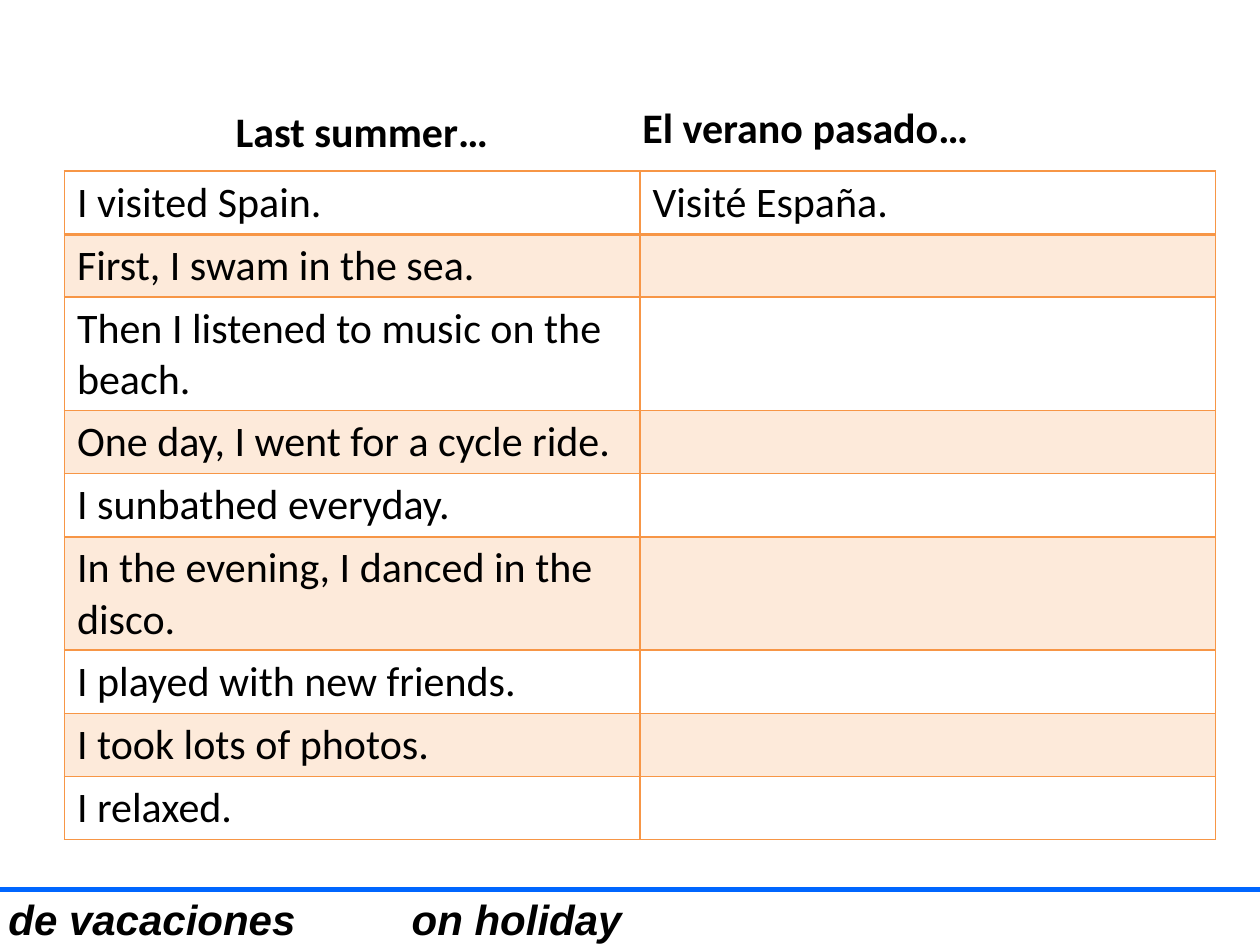
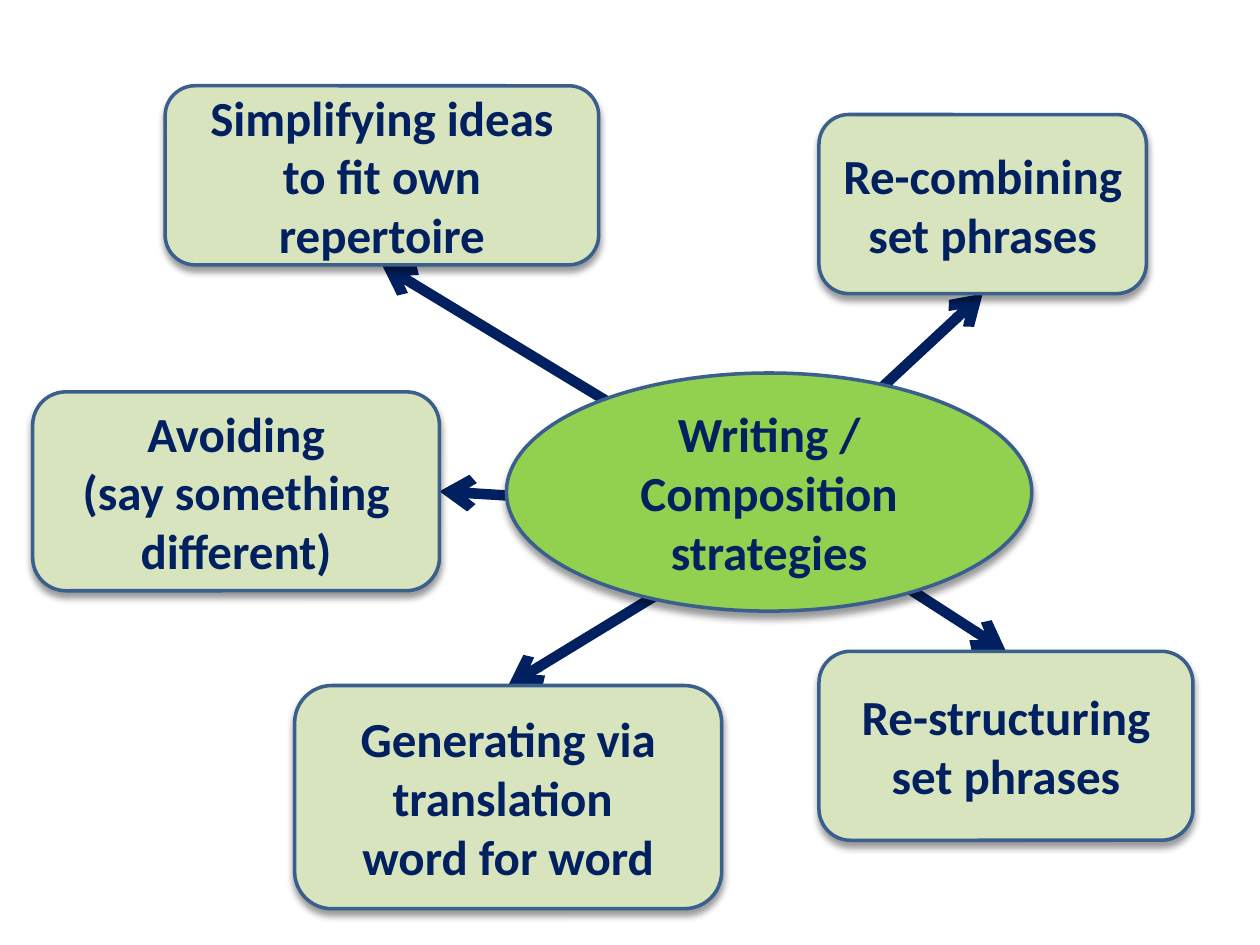
"""Builds two language-lesson slides: a translation table and a map of writing strategies."""
from dataclasses import dataclass

from lxml import etree
from pptx import Presentation
from pptx import util as u
from pptx.dml.color import RGBColor
from pptx.enum import shapes, text
from pptx.oxml import ns


@dataclass(frozen=True)
class Theme:
    ink: str = "000000"
    navy: str = "002060"
    outline: str = "3A5F8C"
    orange: str = "F79646"
    rule: str = "0066FF"
    hub: str = "92D050"
    leaf: str = "D7E4BD"
    body_font: str = "Calibri"
    footer_font: str = "Arial"
    body_size: int = 24
    node_size: int = 28


def add_xml(parent, tag, **attributes):
    return etree.SubElement(parent, ns.qn(tag), attributes)


class Deck:
    def __init__(self, theme):
        self.theme = theme
        self.prs = Presentation()
        self.prs.slide_width, self.prs.slide_height = u.Cm(25.4), u.Cm(19.05)
        self.slide = None

    def new_slide(self):
        self.slide = self.prs.slides.add_slide(self.prs.slide_layouts[6])

    def style(self, paragraph, size, color, bold=False, italic=False, face=None):
        font = paragraph.font
        font.name = face or self.theme.body_font
        font.size, font.bold, font.italic = u.Pt(size), bold, italic
        font.color.rgb = RGBColor.from_string(color)

    def label(self, words, box, tab=None, **look):
        frame = self.slide.shapes.add_textbox(*map(u.Cm, box)).text_frame
        frame.word_wrap = True
        frame.auto_size = text.MSO_AUTO_SIZE.SHAPE_TO_FIT_TEXT
        paragraph = frame.paragraphs[0]
        paragraph.text = words
        self.style(paragraph, self.theme.body_size, self.theme.ink, bold=True, **look)
        if tab:
            stops = etree.Element(ns.qn("a:tabLst"))
            add_xml(stops, "a:tab", pos=str(u.Cm(tab)), algn="l")
            paragraph.font._element.addprevious(stops)

    def line(self, start, end, color, width, arrow=False):
        link = self.slide.shapes.add_connector(
            shapes.MSO_CONNECTOR.STRAIGHT, *map(u.Cm, (*start, *end)))
        link.line.color.rgb = RGBColor.from_string(color)
        link.line.width = u.Pt(width)
        if arrow:
            add_xml(link.line._get_or_add_ln(), "a:tailEnd", type="arrow")
        add_xml(link._element.spPr, "a:effectLst")
        return link

    def node(self, preset, words, box, fill):
        node = self.slide.shapes.add_shape(preset, *map(u.Cm, box))
        node.fill.solid()
        node.fill.fore_color.rgb = RGBColor.from_string(fill)
        node.line.color.rgb = RGBColor.from_string(self.theme.outline)
        node.line.width = u.Pt(2)
        self.drop_shadow(node)
        frame = node.text_frame
        frame.word_wrap = True
        frame.vertical_anchor = text.MSO_ANCHOR.MIDDLE
        paragraph = frame.paragraphs[0]
        paragraph.text = words
        paragraph.alignment = text.PP_ALIGN.CENTER
        self.style(paragraph, self.theme.node_size, self.theme.navy, bold=True)
        return node

    def drop_shadow(self, node):
        node.shadow.inherit = False
        effects = node._element.spPr.find(ns.qn("a:effectLst"))
        shadow = add_xml(effects, "a:outerShdw", blurRad=str(u.Pt(4)), dist=str(u.Pt(3)),
                         dir="5400000", rotWithShape="0")
        add_xml(add_xml(shadow, "a:srgbClr", val="000000"), "a:alpha", val="40000")

    def table(self, rows, corner, column_width, row_height):
        columns = len(rows[0])
        grid = self.slide.shapes.add_table(
            len(rows), columns, *map(u.Cm, corner),
            u.Cm(column_width * columns), u.Cm(row_height * len(rows))).table
        grid.first_row = grid.horz_banding = False
        for r, row in enumerate(rows):
            grid.rows[r].height = u.Cm(row_height)
            for c, words in enumerate(row):
                self.cell(grid.cell(r, c), words, shaded=r % 2 == 1,
                          top=2 if r == 1 else 1, bottom=2 if r == 0 else 1)

    def cell(self, cell, words, shaded, top, bottom):
        paragraph = cell.text_frame.paragraphs[0]
        paragraph.text = words
        self.style(paragraph, self.theme.body_size, self.theme.ink)
        properties = cell._tc.get_or_add_tcPr()
        for side, width in (("L", 1), ("R", 1), ("T", top), ("B", bottom)):
            border = add_xml(properties, f"a:ln{side}", w=str(u.Pt(width)))
            add_xml(add_xml(border, "a:solidFill"), "a:srgbClr", val=self.theme.orange)
        if shaded:
            tint = add_xml(add_xml(properties, "a:solidFill"), "a:srgbClr", val=self.theme.orange)
            add_xml(tint, "a:alpha", val="20000")
        else:
            add_xml(properties, "a:noFill")


def translation_slide(deck):
    theme = deck.theme
    deck.new_slide()
    deck.label("de vacaciones\ton holiday", (-0.08, 17.88, 15.93, 1.27), tab=8.13,
               italic=True, face=theme.footer_font)
    deck.line((0, 17.93), (25.4, 17.93), theme.rule, 3)
    sentences = [
        ("I visited Spain.", "Visité España."),
        ("First, I swam in the sea.", ""),
        ("Then I listened to music on the beach.", ""),
        ("One day, I went for a cycle ride.", ""),
        ("I sunbathed everyday.", ""),
        ("In the evening, I danced in the disco.", ""),
        ("I played with new friends.", ""),
        ("I took lots of photos.", ""),
        ("I relaxed.", ""),
    ]
    deck.table(sentences, (1.3, 3.45), column_width=11.6, row_height=1.04)
    deck.label("El verano pasado…", (12.7, 1.93, 8.2, 1.27))
    deck.label("Last summer…", (4.5, 2.01, 8.2, 1.27))


def strategies_slide(deck):
    theme = deck.theme
    deck.new_slide()
    top, right, bottom = 0, 3, 2
    center = (15.95, 10.34)
    strategies = [
        ("Simplifying ideas to fit own repertoire", (3.33, 1.73, 8.74, 3.61), center, bottom),
        ("Avoiding\n(say something different)", (0.66, 7.9, 8.2, 4.01), center, right),
        ("Generating via translation \nword for word", (5.94, 13.82, 8.61, 4.5), center, top),
        ("Re-structuring set phrases", (16.51, 13.13, 7.54, 3.81), center, top),
        ("Re-combining set phrases", (16.51, 2.31, 6.6, 3.61), (15.52, 9.91), bottom),
    ]
    for words, box, start, side in strategies:
        arrow = deck.line(start, box[:2], theme.navy, 6, arrow=True)
        strategy = deck.node(shapes.MSO_SHAPE.ROUNDED_RECTANGLE, words, box, theme.leaf)
        arrow.end_connect(strategy, side)
    deck.node(shapes.MSO_SHAPE.OVAL, "Writing / Composition strategies",
              (10.21, 7.52, 10.59, 4.8), theme.hub)


def main():
    deck = Deck(Theme())
    translation_slide(deck)
    strategies_slide(deck)
    deck.prs.save("out.pptx")


if __name__ == "__main__":
    main()
